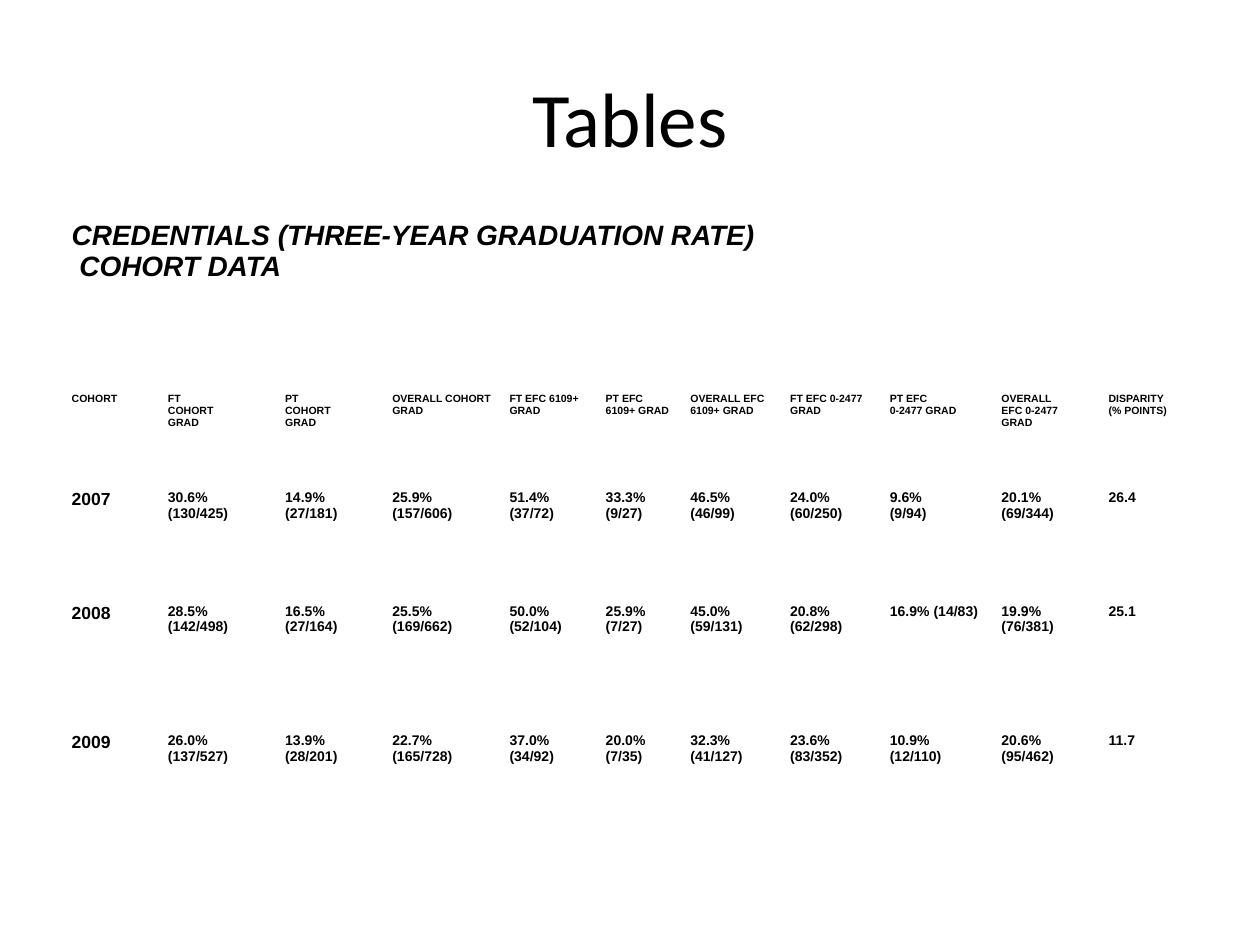
from dataclasses import dataclass
from typing import NamedTuple

from pptx import Presentation
from pptx.dml.color import RGBColor
from pptx.enum.text import MSO_ANCHOR, PP_ALIGN
from pptx.util import Pt


@dataclass(frozen=True)
class Theme:
    ink: RGBColor = RGBColor(0, 0, 0)
    title_font: str = "Calibri"
    table_font: str = "Arial"
    title: float = 44
    caption: float = 16
    header: float = 6
    year: float = 10
    rate: float = 8


class Cohort(NamedTuple):
    year: str
    rates: list[str]
    disparity: str


THEME = Theme()
CAPTION = "CREDENTIALS (THREE-YEAR GRADUATION RATE)\n COHORT DATA"
HEADERS = [
    "COHORT", "FT\nCOHORT\nGRAD", "PT\nCOHORT\nGRAD", "OVERALL COHORT GRAD",
    "FT EFC 6109+ GRAD", "PT EFC 6109+ GRAD", "OVERALL EFC 6109+ GRAD",
    "FT EFC 0-2477 GRAD", "PT EFC\n0-2477 GRAD", "OVERALL\nEFC 0-2477 GRAD",
    "DISPARITY\n(% POINTS)",
]
COHORTS = [
    Cohort("2007", ["30.6% (130/425)", "14.9% (27/181)", "25.9% (157/606)",
                    "51.4%\n(37/72)", "33.3% (9/27)", "46.5% (46/99)",
                    "24.0% (60/250)", "9.6%\n(9/94)", "20.1% (69/344)"], "26.4"),
    Cohort("2008", ["28.5%\n(142/498)", "16.5%\n(27/164)", "25.5%\n(169/662)",
                    "50.0%\n(52/104)", "25.9%\n(7/27)", "45.0%\n(59/131)",
                    "20.8%\n(62/298)", "16.9% (14/83)", "19.9% (76/381)"], "25.1"),
    Cohort("2009", ["26.0%\n(137/527)", "13.9%\n(28/201)", "22.7%\n(165/728)",
                    "37.0%\n(34/92)", "20.0%\n(7/35)", "32.3%\n(41/127)",
                    "23.6%\n(83/352)", "10.9%\n(12/110)", "20.6%\n(95/462)"], "11.7"),
]
COL_WIDTHS = [55, 67, 61.2, 67, 55, 48.4, 57, 57, 63.8, 61.2, 67]
ROW_HEIGHTS = [98.6, 55.4, 64.8, 74.2, 49]
CELL_FORMAT = {
    "margin_left": Pt(5), "margin_right": Pt(5),
    "margin_top": 0, "margin_bottom": 0,
    "vertical_anchor": MSO_ANCHOR.TOP,
}


def set_attrs(target, values: dict) -> None:
    for name, value in values.items():
        setattr(target, name, value)


def write_text(tf, text: str, align: PP_ALIGN, **font) -> None:
    tf.text = text
    for p in tf.paragraphs:
        p.alignment = align
        for r in p.runs:
            set_attrs(r.font, font)
            r.font.color.rgb = THEME.ink


def write_cell(cell, text: str, size: float, italic: bool = False) -> None:
    write_text(cell.text_frame, text, PP_ALIGN.LEFT, name=THEME.table_font,
               size=Pt(size), bold=True, italic=italic)


def add_title(s, text: str) -> None:
    sp = s.shapes.title
    set_attrs(sp, {"left": Pt(36), "top": Pt(21.6), "width": Pt(648), "height": Pt(90)})
    sp.text_frame.vertical_anchor = MSO_ANCHOR.MIDDLE
    write_text(sp.text_frame, text, PP_ALIGN.CENTER,
               name=THEME.title_font, size=Pt(THEME.title))


def add_cohort_table(s) -> None:
    table = s.shapes.add_table(
        len(ROW_HEIGHTS), len(COL_WIDTHS), Pt(36), Pt(126),
        Pt(sum(COL_WIDTHS)), Pt(sum(ROW_HEIGHTS))).table
    set_attrs(table, {"first_row": False, "horz_banding": False})
    for col, width in zip(table.columns, COL_WIDTHS):
        col.width = Pt(width)
    for row, height in zip(table.rows, ROW_HEIGHTS):
        row.height = Pt(height)
    for cell in table.iter_cells():
        cell.fill.background()
        set_attrs(cell, CELL_FORMAT)

    table.cell(0, 0).merge(table.cell(0, len(COL_WIDTHS) - 1))
    write_cell(table.cell(0, 0), CAPTION, THEME.caption, italic=True)
    for col, text in enumerate(HEADERS):
        write_cell(table.cell(1, col), text, THEME.header)
    for row, cohort in enumerate(COHORTS, start=2):
        write_cell(table.cell(row, 0), cohort.year, THEME.year)
        for col, text in enumerate([*cohort.rates, cohort.disparity], start=1):
            write_cell(table.cell(row, col), text, THEME.rate)


def main() -> None:
    prs = Presentation()
    set_attrs(prs, {"slide_width": Pt(720), "slide_height": Pt(540)})
    s = prs.slides.add_slide(prs.slide_layouts[5])
    add_title(s, "Tables")
    add_cohort_table(s)
    prs.save("out.pptx")


if __name__ == "__main__":
    main()
